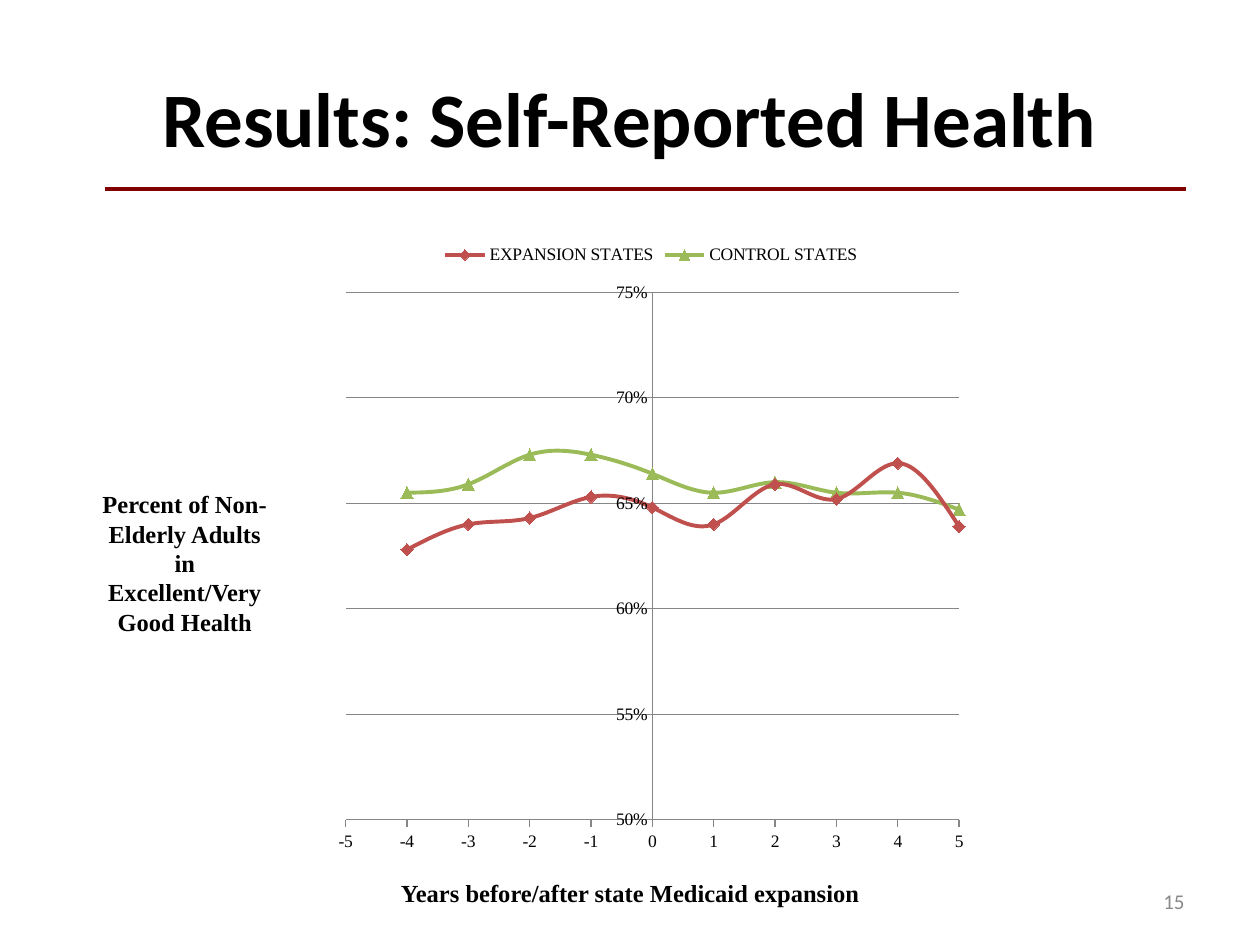
from lxml import etree
from pptx import Presentation
from pptx.chart.data import XyChartData
from pptx.dml.color import RGBColor
from pptx.enum.chart import XL_CHART_TYPE, XL_LEGEND_POSITION, XL_MARKER_STYLE, XL_TICK_MARK
from pptx.enum.shapes import MSO_CONNECTOR
from pptx.enum.text import MSO_ANCHOR, PP_ALIGN
from pptx.oxml.ns import qn
from pptx.util import Pt

SCATTER = XL_CHART_TYPE.XY_SCATTER_SMOOTH
LEGEND_TOP = XL_LEGEND_POSITION.TOP
DIAMOND, TRIANGLE = XL_MARKER_STYLE.DIAMOND, XL_MARKER_STYLE.TRIANGLE
TICK_NONE, TICK_OUTSIDE = XL_TICK_MARK.NONE, XL_TICK_MARK.OUTSIDE
STRAIGHT = MSO_CONNECTOR.STRAIGHT
TOP, MIDDLE = MSO_ANCHOR.TOP, MSO_ANCHOR.MIDDLE
LEFT, CENTER, RIGHT = PP_ALIGN.LEFT, PP_ALIGN.CENTER, PP_ALIGN.RIGHT

BLACK = RGBColor(0x00, 0x00, 0x00)
MAROON = RGBColor(0x80, 0x00, 0x00)
GRAY = RGBColor(0x89, 0x89, 0x89)
AXIS_GRAY = RGBColor(0x86, 0x86, 0x86)
RED = RGBColor(0xC0, 0x50, 0x4D)
GREEN = RGBColor(0x9B, 0xBB, 0x59)
SANS, SERIF = "Calibri", "Times New Roman"

YEARS = range(-4, 6)
GROUPS = [
    ("EXPANSION STATES", RED, DIAMOND,
     [0.628, 0.64, 0.643, 0.653, 0.648, 0.64, 0.659, 0.652, 0.669, 0.639]),
    ("CONTROL STATES", GREEN, TRIANGLE,
     [0.655, 0.659, 0.673, 0.673, 0.664, 0.655, 0.66, 0.655, 0.655, 0.647]),
]


def set_font(font, name, size, color, bold=False):
    font.name, font.size, font.bold = name, Pt(size), bold
    font.color.rgb = color


def place_title(slide, text, box):
    title = slide.shapes.title
    title.left, title.top, title.width, title.height = map(Pt, box)
    title.text_frame.text = text
    title.text_frame.vertical_anchor = MIDDLE
    heading = title.text_frame.paragraphs[0]
    heading.alignment = CENTER
    set_font(heading.font, SANS, 44, BLACK, True)


def add_rule(slide, left, right, y):
    rule = slide.shapes.add_connector(STRAIGHT, Pt(left), Pt(y), Pt(right), Pt(y))
    rule.line.color.rgb = MAROON
    rule.line.width = Pt(2.25)
    etree.SubElement(rule._element.spPr, qn("a:effectLst"))


def add_label(slide, text, box, name, size, color, bold, alignment, anchor=TOP):
    frame = slide.shapes.add_textbox(*map(Pt, box)).text_frame
    frame.word_wrap = True
    frame.vertical_anchor = anchor
    frame.text = text
    label = frame.paragraphs[0]
    label.alignment = alignment
    set_font(label.font, name, size, color, bold)


def format_axis(axis, low, high, step, tick_mark, number_format):
    axis.minimum_scale, axis.maximum_scale, axis.major_unit = low, high, step
    axis.major_tick_mark, axis.minor_tick_mark = tick_mark, TICK_NONE
    axis.tick_labels.number_format = number_format
    axis.tick_labels.number_format_is_linked = False
    axis.format.line.color.rgb = AXIS_GRAY
    axis.format.line.width = Pt(0.75)


def add_health_chart(slide, box):
    data = XyChartData()
    for name, _, _, shares in GROUPS:
        group = data.add_series(name)
        for year, share in zip(YEARS, shares):
            group.add_data_point(year, share)
    chart = slide.shapes.add_chart(SCATTER, *map(Pt, box), data).chart
    chart.has_title = False
    set_font(chart.font, SERIF, 10, BLACK)
    chart.has_legend = True
    chart.legend.position = LEGEND_TOP
    chart.legend.include_in_layout = False
    chart.plots[0].vary_by_categories = False

    years_axis, share_axis = chart.category_axis, chart.value_axis
    format_axis(years_axis, -5, 5, 1, TICK_OUTSIDE, "General")
    format_axis(share_axis, 0.5, 0.75, 0.05, TICK_NONE, "0%")
    years_axis.has_major_gridlines = False
    share_axis.has_major_gridlines = True
    share_axis.major_gridlines.format.line.color.rgb = AXIS_GRAY
    share_axis.major_gridlines.format.line.width = Pt(0.75)

    for series, (_, color, marker, _) in zip(chart.plots[0].series, GROUPS):
        series._element.get_or_add_smooth().val = True
        series.format.line.color.rgb = color
        series.format.line.width = Pt(2.25)
        series.marker.style = marker
        series.marker.size = 7
        series.marker.format.fill.solid()
        series.marker.format.fill.fore_color.rgb = color
        series.marker.format.line.color.rgb = color


def main():
    prs = Presentation()
    prs.slide_width, prs.slide_height = Pt(720), Pt(540)
    slide = prs.slides.add_slide(prs.slide_layouts[5])

    place_title(slide, "Results: Self-Reported Health", (0, 21.6, 720, 90))
    add_rule(slide, 60, 678, 108)
    add_label(slide, "15", (516, 500.5, 168, 28.75), SANS, 12, GRAY, False, RIGHT, MIDDLE)
    add_label(slide, "Percent of Non-Elderly Adults in Excellent/Very Good Health",
              (48, 276, 115.2, 92), SERIF, 14, BLACK, True, CENTER)
    add_label(slide, "Years before/after state Medicaid expansion",
              (222, 498, 302, 24.5), SERIF, 14, BLACK, True, LEFT)
    add_health_chart(slide, (186, 132, 372, 362))
    prs.save("out.pptx")


if __name__ == "__main__":
    main()
